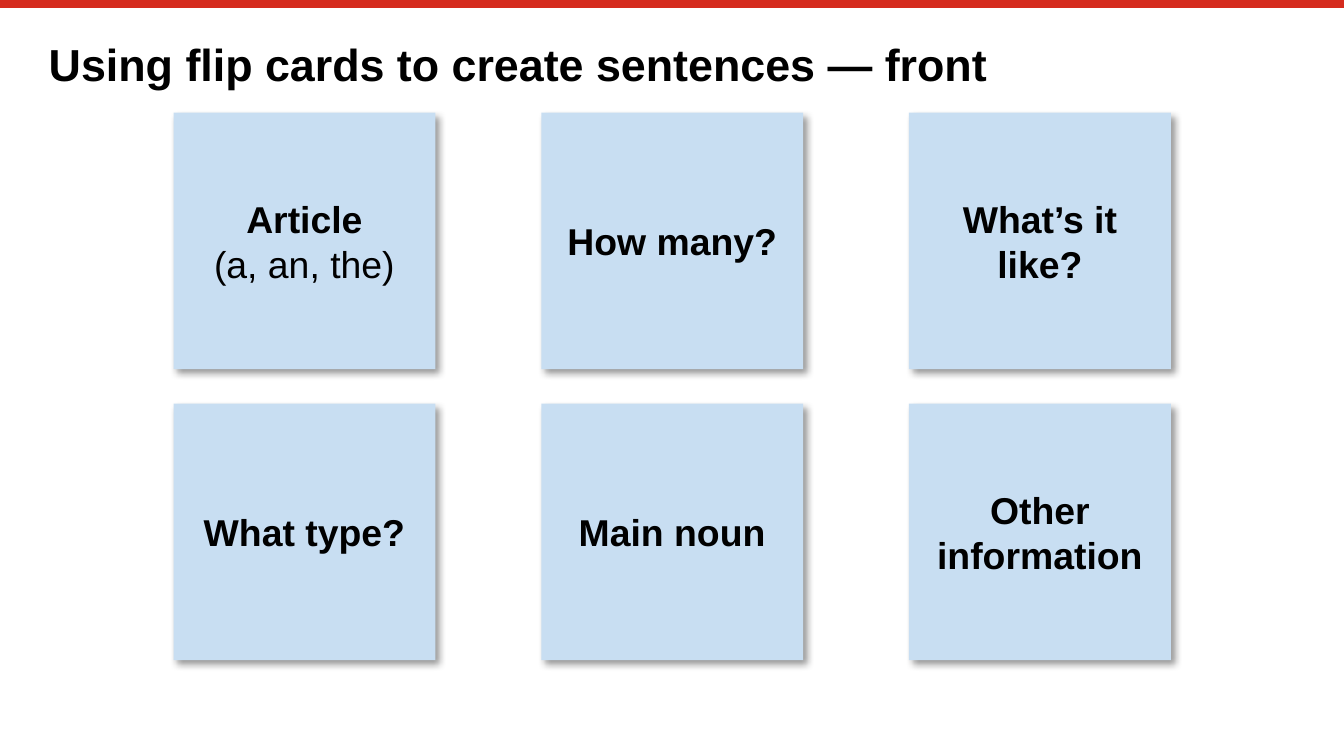
"""Build the flip card slide for making sentences."""
from lxml.etree import SubElement
from pptx import Presentation
from pptx.dml.color import RGBColor
from pptx.enum.shapes import MSO_CONNECTOR, MSO_SHAPE
from pptx.enum.text import MSO_ANCHOR, MSO_AUTO_SIZE, PP_ALIGN
from pptx.oxml.ns import qn
from pptx.util import Cm, Pt

COLORS = {"text": "000000", "card": "C8DEF2", "rule": "D52B1E", "shadow": "000000"}
CARDS = [
    [["Article", "(a, an, the)"], ["How many?"], ["What’s it like?"]],
    [["What type?"], ["Main noun"], ["Other information"]],
]
LEFT, TOP = 3.28, 2.13
WIDTH, HEIGHT = 4.95, 4.85
COLUMN_STEP, ROW_STEP = 6.95, 5.5


class CardPage:
    font_name = "Arial"

    def __init__(self, page):
        self.page = page

    def color(self, name):
        return RGBColor.from_string(COLORS[name])

    def style(self, paragraph, size, bold=True):
        font = paragraph.font
        font.name = self.font_name
        font.size = Pt(size)
        font.bold = bold
        font.color.rgb = self.color("text")

    def rule(self, y, width):
        line = self.page.shapes.add_connector(
            MSO_CONNECTOR.STRAIGHT, 0, Cm(y), Cm(width), Cm(y))
        line.line.color.rgb = self.color("rule")
        line.line.width = Pt(4.2)
        SubElement(line._element.spPr, qn("a:effectLst"))

    def title(self, text, left, top, width, height):
        box = self.page.shapes.title
        box.left, box.top, box.width, box.height = map(Cm, (left, top, width, height))
        frame = box.text_frame
        frame.margin_left = frame.margin_right = 0
        frame.margin_top = frame.margin_bottom = 0
        frame.vertical_anchor = MSO_ANCHOR.MIDDLE
        frame.auto_size = MSO_AUTO_SIZE.NONE
        frame.text = text
        paragraph = frame.paragraphs[0]
        paragraph.alignment = PP_ALIGN.LEFT
        paragraph.line_spacing = 0.9
        self.style(paragraph, 24)

    def flatten_corner(self, box):
        geometry = box._element.spPr.find(qn("a:prstGeom"))
        guides = geometry.find(qn("a:avLst"))
        SubElement(guides, qn("a:gd"), name="adj", fmla="val 0")

    def shadow(self, box):
        box.shadow.inherit = False
        effects = box._element.spPr.find(qn("a:effectLst"))
        outer = SubElement(
            effects, qn("a:outerShdw"), blurRad=str(Pt(4)), dist=str(Pt(3)),
            dir=str(45 * 60000), algn="tl", rotWithShape="0")
        tint = SubElement(outer, qn("a:srgbClr"), val=COLORS["shadow"])
        SubElement(tint, qn("a:alpha"), val="40000")

    def card(self, lines, left, top):
        box = self.page.shapes.add_shape(
            MSO_SHAPE.FOLDED_CORNER, Cm(left), Cm(top), Cm(WIDTH), Cm(HEIGHT))
        self.flatten_corner(box)
        box.fill.solid()
        box.fill.fore_color.rgb = self.color("card")
        box.line.fill.background()
        self.shadow(box)
        frame = box.text_frame
        frame.word_wrap = True
        frame.vertical_anchor = MSO_ANCHOR.MIDDLE
        frame.text = "\n".join(lines)
        for index, paragraph in enumerate(frame.paragraphs):
            paragraph.alignment = PP_ALIGN.CENTER
            self.style(paragraph, 20, bold=index == 0)


def main():
    deck = Presentation()
    deck.slide_width, deck.slide_height = Cm(25.4), Cm(14.29)
    cards = CardPage(deck.slides.add_slide(deck.slide_layouts[5]))
    cards.rule(0.08, 25.4)
    cards.title("Using flip cards to create sentences — front", 0.92, 0.76, 23.6, 1)
    for row, labels in enumerate(CARDS):
        for column, lines in enumerate(labels):
            cards.card(lines, LEFT + column * COLUMN_STEP, TOP + row * ROW_STEP)
    deck.save("out.pptx")


if __name__ == "__main__":
    main()
